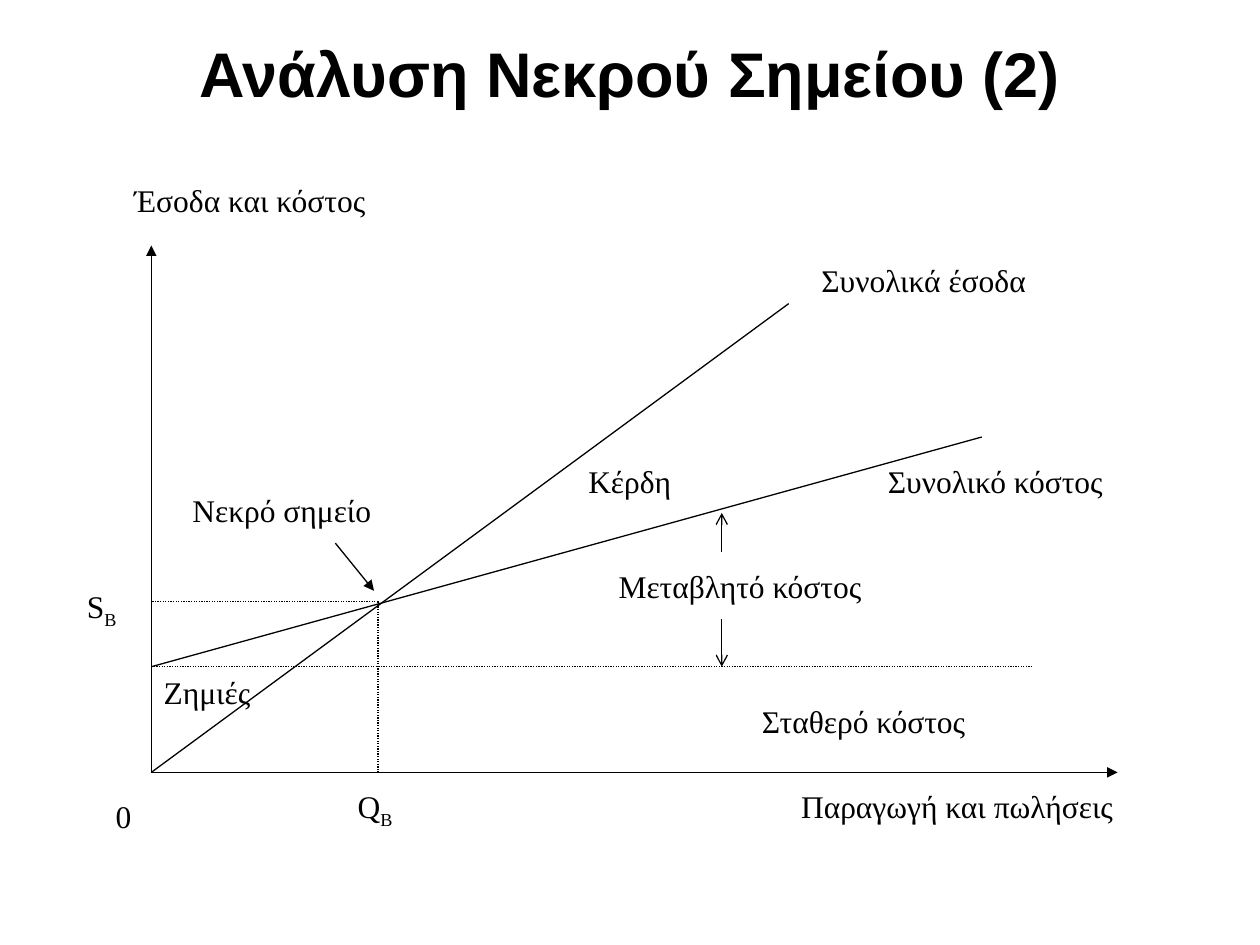
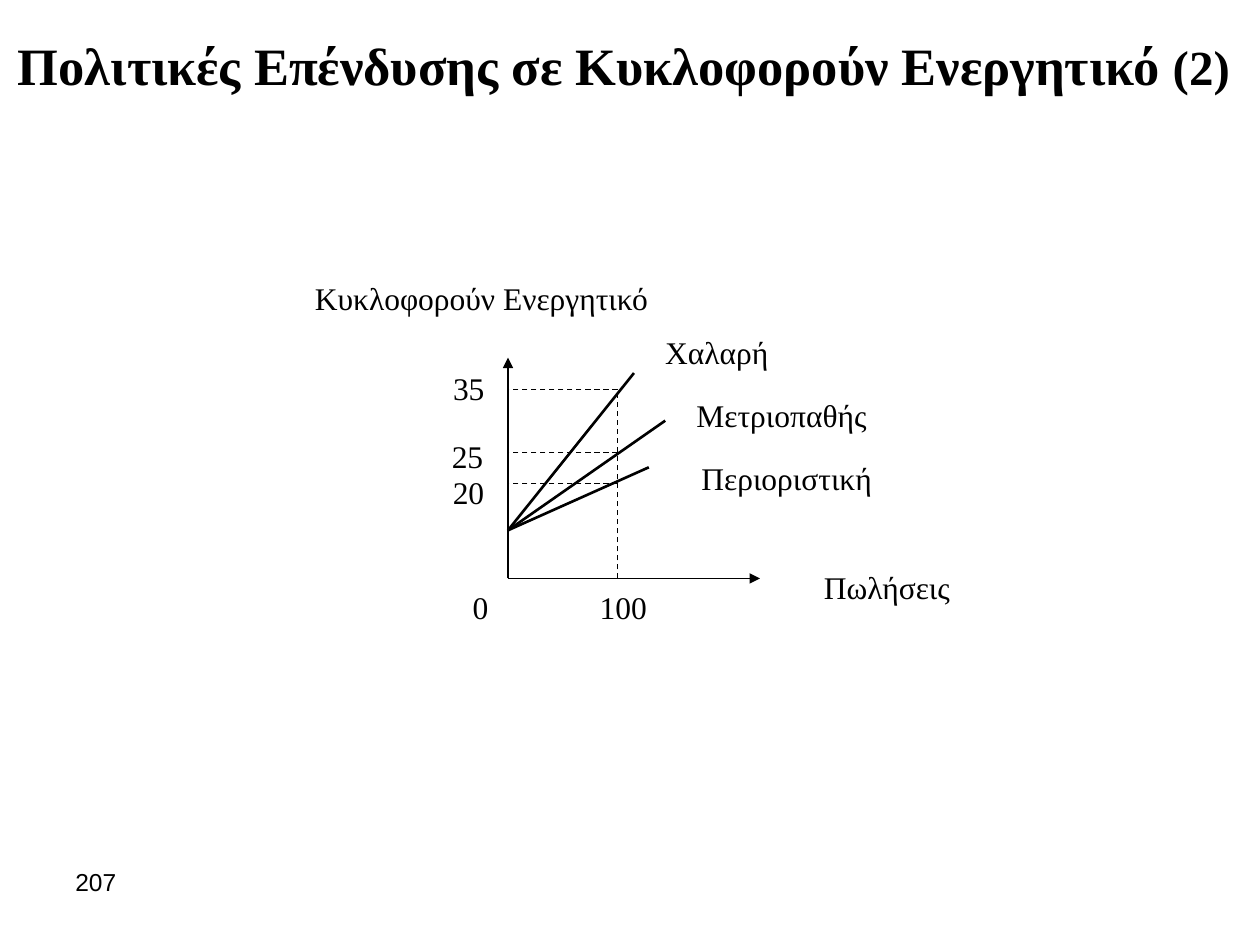
"""Build two slides of finance line diagrams: break-even and working capital."""
from dataclasses import dataclass
from typing import Optional

from lxml.etree import SubElement
from pptx import Presentation
from pptx.dml.color import RGBColor
from pptx.enum.dml import MSO_LINE as Dash
from pptx.enum.shapes import MSO_CONNECTOR as Connector
from pptx.enum.text import MSO_ANCHOR as Anchor, MSO_AUTO_SIZE as AutoSize, PP_ALIGN as Align
from pptx.oxml.ns import qn
from pptx.util import Cm, Pt

INK = "000000"
SERIF = "Times New Roman"
SANS = "Arial"
TITLE_ONLY = 5
PAGE_WIDTH = 25.4

Point = tuple[float, float]


@dataclass(frozen=True)
class Span:
    text: str
    size: Optional[float] = None
    baseline: int = 0


@dataclass(frozen=True)
class Label:
    text: str
    left: float
    top: float
    width: float
    height: float = 0.76
    subscript: str = ""
    align: Align = Align.LEFT
    size: float = 18
    font: str = SERIF


@dataclass(frozen=True)
class Line:
    start: Point
    end: Point
    weight: float = 0.75
    dash: Optional[Dash] = None
    arrow: str = ""


def colour(value: str) -> RGBColor:
    return RGBColor.from_string(value)


def write_text(shape, spans: list[Span], *, size: float = 18, font: str = SERIF,
               bold: bool = False, align: Align = Align.LEFT) -> None:
    frame = shape.text_frame
    frame.word_wrap = True
    frame.auto_size = AutoSize.NONE
    frame.vertical_anchor = Anchor.TOP
    para = frame.paragraphs[0]
    para.alignment = align
    for span in spans:
        run = para.add_run()
        run.text = span.text
        run.font.name = font
        run.font.size = Pt(span.size or size)
        run.font.bold = bold
        run.font.color.rgb = colour(INK)
        if span.baseline:
            run._r.get_or_add_rPr().set("baseline", str(span.baseline * 1000))


def add_label(page, label: Label) -> None:
    box = page.shapes.add_textbox(Cm(label.left), Cm(label.top), Cm(label.width), Cm(label.height))
    spans = [Span(label.text)]
    if label.subscript:
        spans.append(Span(label.subscript, baseline=-25))
    write_text(box, spans, size=label.size, font=label.font, align=label.align)


def add_line(page, line: Line) -> None:
    ends = [Cm(value) for value in (*line.start, *line.end)]
    connector = page.shapes.add_connector(Connector.STRAIGHT, *ends)
    connector.line.color.rgb = colour(INK)
    connector.line.width = Pt(line.weight)
    if line.dash:
        connector.line.dash_style = line.dash
    properties = connector._element.spPr
    if line.arrow:
        SubElement(properties.find(qn("a:ln")), qn("a:tailEnd"), type=line.arrow)
    SubElement(properties, qn("a:effectLst"))


def add_page(deck, title: list[Span], lines: list[Line], labels: list[Label], *,
             top: float, height: float, size: float, font: str):
    page = deck.slides.add_slide(deck.slide_layouts[TITLE_ONLY])
    heading = page.shapes.title
    heading.left, heading.top = Cm(0), Cm(top)
    heading.width, heading.height = Cm(PAGE_WIDTH), Cm(height)
    write_text(heading, title, size=size, font=font, bold=True, align=Align.CENTER)
    for line in lines:
        add_line(page, line)
    for label in labels:
        add_label(page, label)


def axes(origin: Point, right: float, top: float) -> list[Line]:
    return [Line(origin, (origin[0], top), arrow="triangle"),
            Line(origin, (right, origin[1]), arrow="triangle")]


def add_break_even(deck) -> None:
    origin = left, bottom = 3.05, 15.57
    break_even = quantity, sales = 7.62, 12.12
    fixed_cost = 13.44
    variable_x = 14.55
    dotted = Dash.ROUND_DOT
    lines = axes(origin, 22.53, 4.95) + [
        Line(origin, (15.9, 6.12)),
        Line((left, fixed_cost), (19.79, 8.81)),
        Line(break_even, (left, sales), dash=dotted),
        Line(break_even, (quantity, bottom), dash=dotted),
        Line((left, fixed_cost), (20.83, fixed_cost), dash=dotted),
        Line((6.76, 10.95), (7.54, 11.91), arrow="triangle"),
        Line((variable_x, 11.13), (variable_x, 10.34), arrow="arrow"),
        Line((variable_x, 12.47), (variable_x, fixed_cost), arrow="arrow"),
    ]
    labels = [
        Label("S", 1.5, 11.71, 1.55, subscript="B"),
        Label("Συνολικό κόστος", 17.65, 9.19, 5.64),
        Label("Κέρδη", 11.61, 9.19, 2.72),
        Label("Ζημιές", left, fixed_cost, 2.72),
        Label("Έσοδα και κόστος", 2.46, 3.53, 5.61),
        Label("Παραγωγή και πωλήσεις", 15.9, 15.75, 7.39),
        Label("Νεκρό σημείο", 3.63, 9.78, 5.64),
        Label("Σταθερό κόστος", 15.11, 14.02, 5.64),
        Label("Q", 6.96, 15.75, 1.75, subscript="B"),
        Label("0", 2.08, 15.95, 1.75),
        Label("Μεταβλητό κόστος", 12.22, 11.3, 5.64),
        Label("Συνολικά έσοδα", 16.31, 5.13, 5.64),
    ]
    add_page(deck, [Span("Ανάλυση Νεκρού Σημείου (2)")], lines, labels,
             top=0.56, height=1.37, size=36, font=SANS)


def add_investment_policies(deck) -> None:
    origin = left, bottom = 10.24, 11.66
    intercept = (left, 10.69)
    sales = 12.45
    asset_levels = (7.85, 9.12, 9.75)
    policy_ends = ((12.78, 7.52), (13.41, 8.48), (13.08, 9.42))
    lines = axes(origin, 15.32, 7.21)
    lines += [Line(intercept, end, weight=1.5) for end in policy_ends]
    lines += [Line((sales, level), (left, level), dash=Dash.DASH) for level in asset_levels]
    lines.append(Line((sales, bottom), (sales, asset_levels[0]), dash=Dash.DASH))
    labels = [
        Label("Κυκλοφορούν Ενεργητικό", 6.1, 5.51, 8, 0.97),
        Label("Χαλαρή", 13.16, 6.58, 3.73, 0.97),
        Label("Μετριοπαθής", 13.79, 7.85, 4.5, 0.97),
        Label("Περιοριστική", 13.89, 9.12, 4.62, 0.97),
        Label("20", 8.38, 9.42, 2.13, 0.64, align=Align.CENTER),
        Label("25", 8.56, 8.69, 1.73, 0.64, align=Align.CENTER),
        Label("35", 8.69, 7.32, 1.52, 0.64, align=Align.CENTER),
        Label("Πωλήσεις", 16.36, 11.33, 4.34, 0.97),
        Label("0", 8.89, 11.73, 1.6, 0.99, align=Align.CENTER),
        Label("100", 11.84, 11.73, 1.52, 0.64),
        Label("207", 1.27, 17.35, 5.92, 1.32, size=14, font=SANS),
    ]
    title = [Span("Πολιτικές Επένδυσης σε Κυκλοφορούν Ενεργητικό"), Span(" (2) ", size=28)]
    add_page(deck, title, lines, labels, top=0.53, height=1.8, size=30, font=SERIF)


def main() -> None:
    deck = Presentation()
    deck.slide_width, deck.slide_height = Cm(PAGE_WIDTH), Cm(19.05)
    add_break_even(deck)
    add_investment_policies(deck)
    deck.save("out.pptx")


if __name__ == "__main__":
    main()
